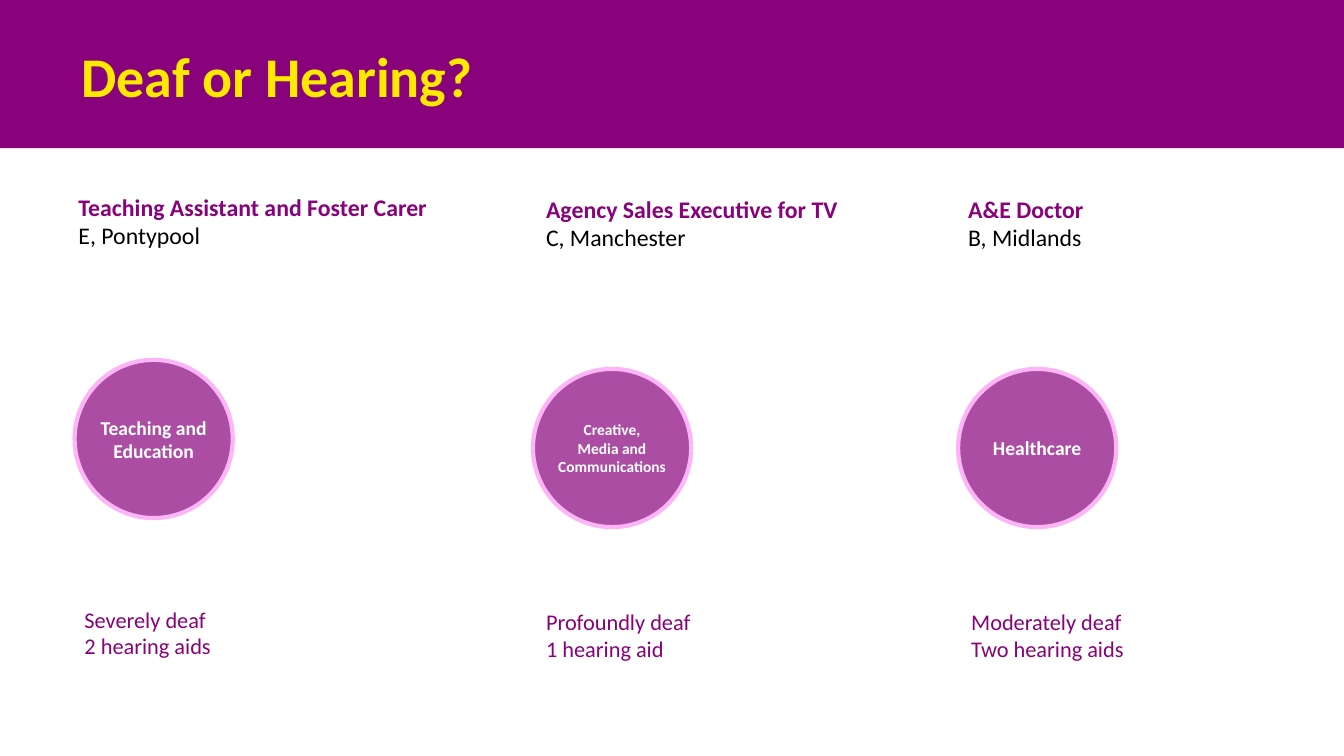
from dataclasses import dataclass

from pptx import Presentation
from pptx.dml.color import RGBColor
from pptx.enum.shapes import MSO_SHAPE
from pptx.enum.text import MSO_ANCHOR, MSO_AUTO_SIZE, PP_ALIGN
from pptx.util import Inches, Pt

COLOURS = {
    "purple": "87027B",
    "orchid": "AB4EA3",
    "pink": "FEB5F7",
    "yellow": "FFE900",
    "white": "FFFFFF",
    "black": "000000",
}
WIDE_INSET = (0.13, 0.07)
SLIM_INSET = (0.1, 0.05)


@dataclass
class Profile:
    role: str
    person: str
    sector: str
    hearing: str
    role_left: float
    left: float
    circle_top: float
    role_width: float
    hearing_width: float
    sector_size: int = 14
    inset: tuple = WIDE_INSET


PROFILES = [
    Profile("Teaching Assistant and Foster Carer", "E, Pontypool",
            "Teaching and Education", "Severely deaf\n2 hearing aids",
            5.1, 5.55, 47.6, 33.66, 20.3, inset=SLIM_INSET),
    Profile("Agency Sales Executive for TV", "C, Manchester",
            "Creative,\vMedia and\nCommunications", "Profoundly deaf\n1 hearing aid",
            39.66, 39.66, 48.8, 29.6, 20.7, sector_size=11),
    Profile("A&E Doctor", "B, Midlands",
            "Healthcare", "Moderately deaf\nTwo hearing aids",
            71.06, 71.29, 48.8, 20.5, 20.7),
]


class SlideBuilder:
    font = "Calibri"

    def __init__(self, deck):
        self.width, self.height = deck.slide_width, deck.slide_height
        self.slide = deck.slides.add_slide(deck.slide_layouts[5])

    def across(self, percent):
        return round(self.width * percent / 100)

    def down(self, percent):
        return round(self.height * percent / 100)

    def box(self, left, top, width, height):
        return self.across(left), self.down(top), self.across(width), self.down(height)

    def style(self, paragraph, size, colour, bold=False, align=PP_ALIGN.LEFT):
        paragraph.alignment = align
        for run in paragraph.runs:
            run.font.name = self.font
            run.font.size = Pt(size)
            run.font.bold = bold
            run.font.color.rgb = RGBColor.from_string(COLOURS[colour])

    def frame(self, shape, words, inset, anchor=MSO_ANCHOR.TOP):
        frame = shape.text_frame
        frame.text = words
        frame.word_wrap = True
        frame.auto_size = MSO_AUTO_SIZE.NONE
        frame.vertical_anchor = anchor
        frame.margin_left = frame.margin_right = Inches(inset[0])
        frame.margin_top = frame.margin_bottom = Inches(inset[1])
        return frame.paragraphs

    def title(self, words, *place):
        title = self.slide.shapes.title
        title.left, title.top, title.width, title.height = self.box(*place)
        heading = self.frame(title, words, WIDE_INSET, MSO_ANCHOR.MIDDLE)[0]
        self.style(heading, 40, "yellow", bold=True)

    def filled(self, preset, place, colour):
        shape = self.slide.shapes.add_shape(preset, *place)
        shape.shadow.inherit = False
        shape.fill.solid()
        shape.fill.fore_color.rgb = RGBColor.from_string(COLOURS[colour])
        return shape

    def band(self, height):
        band = self.filled(MSO_SHAPE.RECTANGLE, self.box(0, 0, 100, height), "purple")
        band.line.fill.background()
        self.slide.shapes.title._element.addprevious(band._element)

    def text(self, words, place, inset):
        label = self.slide.shapes.add_textbox(*self.box(*place))
        return self.frame(label, words, inset)

    def circle(self, words, left, top, size):
        diameter = self.across(11.77)
        place = self.across(left), self.down(top), diameter, diameter
        circle = self.filled(MSO_SHAPE.OVAL, place, "orchid")
        circle.line.color.rgb = RGBColor.from_string(COLOURS["pink"])
        circle.line.width = Pt(3)
        for paragraph in self.frame(circle, words, (0, 0), MSO_ANCHOR.MIDDLE):
            self.style(paragraph, size, "white", bold=True, align=PP_ALIGN.CENTER)

    def profile(self, entry):
        role, person = self.text(f"{entry.role}\n{entry.person}",
                                 (entry.role_left, 24.8, entry.role_width, 10.53),
                                 entry.inset)
        self.style(role, 17, "purple", bold=True)
        self.style(person, 17, "black")
        self.circle(entry.sector, entry.left, entry.circle_top, entry.sector_size)
        for paragraph in self.text(entry.hearing,
                                   (entry.left, 79.47, entry.hearing_width, 10.53),
                                   entry.inset):
            self.style(paragraph, 16, "purple")


def main():
    deck = Presentation()
    deck.slide_width, deck.slide_height = Inches(13.34), Inches(7.5)
    builder = SlideBuilder(deck)
    builder.band(19.6)
    builder.title("Deaf or Hearing?", 5.1, 4.67, 67.7, 10.53)
    for entry in PROFILES:
        builder.profile(entry)
    deck.save("out.pptx")


if __name__ == "__main__":
    main()
